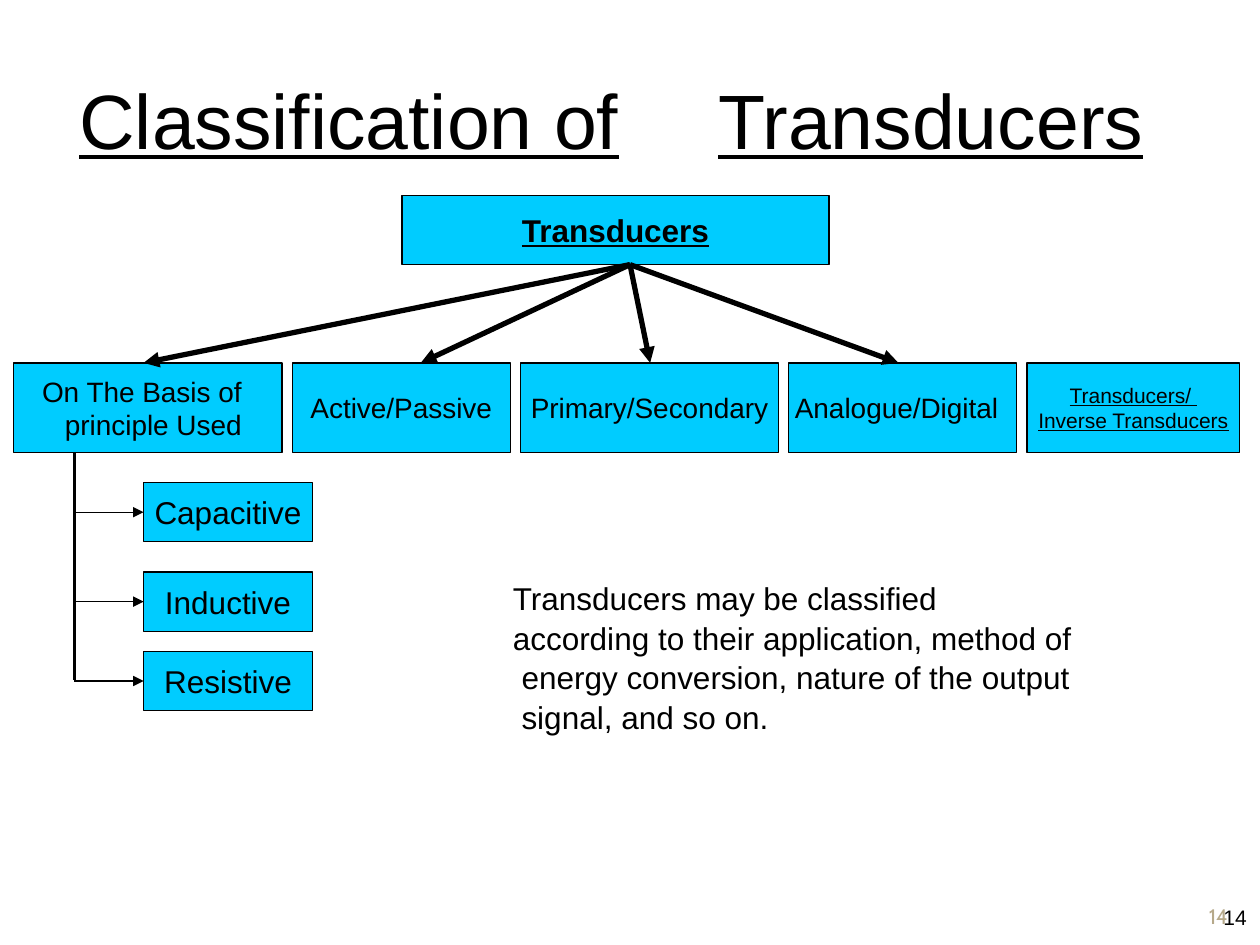
from dataclasses import dataclass

from lxml import etree
from pptx import Presentation
from pptx.dml.color import RGBColor
from pptx.enum.shapes import MSO_CONNECTOR, MSO_SHAPE
from pptx.enum.text import MSO_ANCHOR, PP_ALIGN
from pptx.oxml.ns import qn
from pptx.util import Inches, Pt

RECTANGLE = MSO_SHAPE.RECTANGLE
STRAIGHT = MSO_CONNECTOR.STRAIGHT
LEFT, CENTER, RIGHT = PP_ALIGN.LEFT, PP_ALIGN.CENTER, PP_ALIGN.RIGHT
TOP, MIDDLE, BOTTOM = MSO_ANCHOR.TOP, MSO_ANCHOR.MIDDLE, MSO_ANCHOR.BOTTOM


@dataclass(frozen=True)
class Theme:
    """Colours, fonts, type sizes and line widths of the slide."""
    ink: RGBColor = RGBColor.from_string("000000")
    box: RGBColor = RGBColor.from_string("00CCFF")
    faint: RGBColor = RGBColor.from_string("B6A98A")
    font: str = "Arial"
    number_font: str = "Cabin"
    title: int = 44
    body: int = 18
    category: int = 16
    small: int = 12
    outline: float = 0.75
    trunk: float = 2
    branch: float = 3


THEME = Theme()

CATEGORIES = [
    ("On The Basis of\nprinciple Used", 2.13,
     {"align": RIGHT, "right_inset": 0.32}),
    ("Active/Passive", 1.73, {}),
    ("Primary/Secondary", 2.05, {}),
    ("Analogue/Digital", 1.81, {"right_inset": 0.1}),
    ("Transducers/ \nInverse Transducers", 1.69,
     {"size": THEME.small, "underline": True}),
]
PRINCIPLES = [("Capacitive", 0), ("Inductive", 0.71), ("Resistive", 1.34)]
BODY = ("Transducers may be classified\n"
        "according to their application, method of\n"
        " energy conversion, nature of the output\n"
        " signal, and so on.")


def write(shape, text, size=THEME.body, font=THEME.font, color=THEME.ink,
          bold=False, underline=False, align=LEFT, anchor=TOP,
          right_inset=0, spacing=None, tab=None):
    """Fill a shape with one formatted paragraph; newlines become line breaks."""
    frame = shape.text_frame
    frame.word_wrap = True
    frame.vertical_anchor = anchor
    frame.margin_left = frame.margin_top = frame.margin_bottom = 0
    frame.margin_right = Inches(right_inset)
    paragraph = frame.paragraphs[0]
    paragraph.alignment = align
    if spacing:
        paragraph.line_spacing = spacing
    if tab:
        stops = etree.SubElement(paragraph._p.get_or_add_pPr(), qn("a:tabLst"))
        etree.SubElement(stops, qn("a:tab"), pos=str(Inches(tab)), algn="l")
    for index, line in enumerate(text.split("\n")):
        if index:
            paragraph.add_line_break()
        for part in filter(None, line.partition("\t")):
            run = paragraph.add_run()
            run.text = part
            run.font.name = font
            run.font.size = Pt(size)
            run.font.bold = bold
            run.font.underline = underline and part != "\t"
            run.font.color.rgb = color


def add_label(slide, box, text, **style):
    """Place free text in a box of left, top, width and height."""
    write(slide.shapes.add_textbox(*map(Inches, box)), text, **style)


def add_node(slide, box, text, **style):
    """Place an outlined box with centred text."""
    node = slide.shapes.add_shape(RECTANGLE, *map(Inches, box))
    node.shadow.inherit = False
    node.fill.solid()
    node.fill.fore_color.rgb = THEME.box
    node.line.color.rgb = THEME.ink
    node.line.width = Pt(THEME.outline)
    write(node, text, **{"align": CENTER, "anchor": MIDDLE, **style})


def add_line(slide, start, end, width, arrow=True):
    """Draw a straight line, with an arrowhead at its end if wanted."""
    line = slide.shapes.add_connector(STRAIGHT, *map(Inches, (*start, *end)))
    line.line.color.rgb = THEME.ink
    line.line.width = Pt(width)
    if arrow:
        etree.SubElement(line.line._get_or_add_ln(), qn("a:tailEnd"),
                         type="triangle", w="med", len="med")
    etree.SubElement(line._element.spPr, qn("a:effectLst"))


def add_categories(slide, box, gap=0.08):
    """Lay the category boxes side by side from the left of the box."""
    left, top, _, height = box
    for text, width, style in CATEGORIES:
        add_node(slide, (left, top, width, height), text,
                 **{"size": THEME.category, **style})
        left += width + gap


def add_branches(slide, box, origin=3.86, targets=(0, 5.99, 2.2, 4.02)):
    """Fan arrows from one point on the top of the box to its bottom."""
    left, top, _, height = box
    for target in targets:
        add_line(slide, (left + origin, top),
                 (left + target, top + height), THEME.branch)


def add_principles(slide, box, lead=0.24, indent=0.55, node_height=0.47):
    """Hang the principle boxes from a trunk at the left of the box."""
    left, top, width, height = box
    add_line(slide, (left, top), (left, top + height), THEME.trunk, arrow=False)
    for text, offset in PRINCIPLES:
        node_top = top + lead + offset
        middle = node_top + node_height / 2
        add_node(slide, (left + indent, node_top, width - indent, node_height),
                 text)
        add_line(slide, (left, middle), (left + indent, middle), THEME.outline)


def add_page_numbers(slide, box):
    """Set the two page numbers in the corner box."""
    left, top, width, height = box
    add_label(slide, (left + 0.29, top + 0.28, 0.21, 0.23), "14",
              size=THEME.small)
    add_label(slide, (left, top, width, height - 0.05), "14", size=THEME.small,
              font=THEME.number_font, color=THEME.faint,
              align=CENTER, anchor=BOTTOM)


def main():
    """Build and save the slide."""
    deck = Presentation()
    deck.slide_width, deck.slide_height = Inches(10), Inches(7.5)
    slide = deck.slides.add_slide(deck.slide_layouts[6])
    add_label(slide, (0.63, 0.56, 8.75, 0.76),
              "Classification of\tTransducers", size=THEME.title,
              underline=True, anchor=MIDDLE, tab=5.07)
    add_node(slide, (3.19, 1.55, 3.39, 0.55), "Transducers",
             bold=True, underline=True)
    add_categories(slide, (0.11, 2.88, 9.73, 0.71))
    add_branches(slide, (1.14, 2.1, 5.99, 0.78))
    add_principles(slide, (0.59, 3.59, 1.89, 1.81))
    add_label(slide, (4.07, 4.58, 4.6, 1.23), BODY, spacing=1.05)
    add_page_numbers(slide, (9.42, 6.9, 0.5, 0.52))
    deck.save("out.pptx")


if __name__ == "__main__":
    main()
